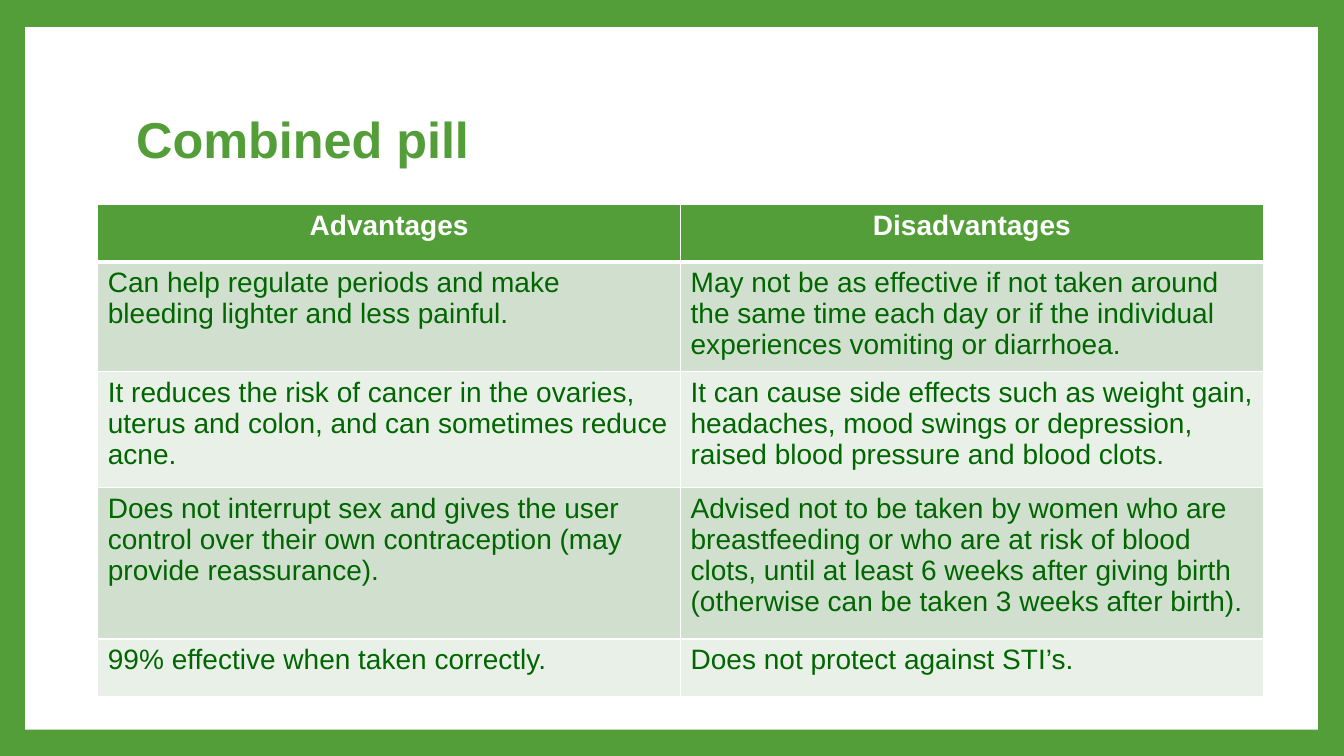
import pptx
import pptx.util
import pptx.dml.color
import pptx.enum.shapes
import pptx.enum.text
import pptx.oxml.ns
from lxml import etree

Inches, Pt = pptx.util.Inches, pptx.util.Pt

TITLE = "Combined pill"
ROWS = [
    ("Advantages", "Disadvantages"),
    ("Can help regulate periods and make bleeding lighter and less painful.",
     "May not be as effective if not taken around the same time each day or if "
     "the individual experiences vomiting or diarrhoea."),
    ("It reduces the risk of cancer in the ovaries, uterus and colon, and can "
     "sometimes reduce acne.",
     "It can cause side effects such as weight gain, headaches, mood swings or "
     "depression, raised blood pressure and blood clots."),
    ("Does not interrupt sex and gives the user control over their own "
     "contraception (may provide reassurance).",
     "Advised not to be taken by women who are breastfeeding or who are at risk "
     "of blood clots, until at least 6 weeks after giving birth (otherwise can "
     "be taken 3 weeks after birth)."),
    ("99% effective when taken correctly.", "Does not protect against STI’s."),
]
ROW_HEIGHTS = [0.57, 1.09, 1.15, 1.5, 0.57]
COLUMN_WIDTH = 5.78
COLORS = {"green": "549E39", "white": "FFFFFF", "text": "006600",
          "dark band": "D1DFCE", "light band": "E9F0E8"}
FONT = "Arial"


def color(name):
    return pptx.dml.color.RGBColor.from_string(COLORS[name])


def add_span(para, text, size, color_name, bold):
    span = para.add_run()
    span.text = text
    span.font.name = FONT
    span.font.size = Pt(size)
    span.font.bold = bold
    span.font.color.rgb = color(color_name)


def add_borders(cell, bottom_width):
    properties = cell._tc.get_or_add_tcPr()
    qn = pptx.oxml.ns.qn
    for side, width in (("L", 1), ("R", 1), ("T", 1), ("B", bottom_width)):
        line = etree.SubElement(properties, qn("a:ln" + side), w=str(Pt(width)))
        fill = etree.SubElement(line, qn("a:solidFill"))
        etree.SubElement(fill, qn("a:srgbClr"), val=COLORS["white"])


deck = pptx.Presentation()
deck.slide_width, deck.slide_height = Inches(13.33), Inches(7.5)
page = deck.slides.add_slide(deck.slide_layouts[5])

# Green frame around a white panel
page.background.fill.solid()
page.background.fill.fore_color.rgb = color("green")
panel = page.shapes.add_shape(pptx.enum.shapes.MSO_SHAPE.RECTANGLE,
                              Inches(0.25), Inches(0.27), Inches(12.82), Inches(6.97))
panel.shadow.inherit = False
panel.fill.solid()
panel.fill.fore_color.rgb = color("white")
panel.line.fill.background()
page.shapes._spTree.insert(2, panel._element)  # behind the title

# Title
title = page.shapes.title
title.left, title.top = Inches(1.25), Inches(0.67)
title.width, title.height = Inches(10.8), Inches(1.48)
title.text_frame.vertical_anchor = pptx.enum.text.MSO_ANCHOR.MIDDLE
title.text_frame.word_wrap = True
para = title.text_frame.paragraphs[0]
para.alignment = pptx.enum.text.PP_ALIGN.LEFT
para.line_spacing = 0.9
add_span(para, TITLE, 36, "green", True)

# Table of advantages and disadvantages
table = page.shapes.add_table(len(ROWS), 2, Inches(0.97), Inches(2.03),
                              Inches(2 * COLUMN_WIDTH), Inches(sum(ROW_HEIGHTS))).table
for column in table.columns:
    column.width = Inches(COLUMN_WIDTH)
for r, (texts, height) in enumerate(zip(ROWS, ROW_HEIGHTS)):
    table.rows[r].height = Inches(height)
    header = r == 0
    band = "green" if header else "dark band" if r % 2 else "light band"
    for c, text in enumerate(texts):
        cell = table.cell(r, c)
        add_borders(cell, 3 if header else 1)
        cell.fill.solid()
        cell.fill.fore_color.rgb = color(band)
        para = cell.text_frame.paragraphs[0]
        if header:
            para.alignment = pptx.enum.text.PP_ALIGN.CENTER
        add_span(para, text, 20, "white" if header else "text", header)

deck.save("out.pptx")
